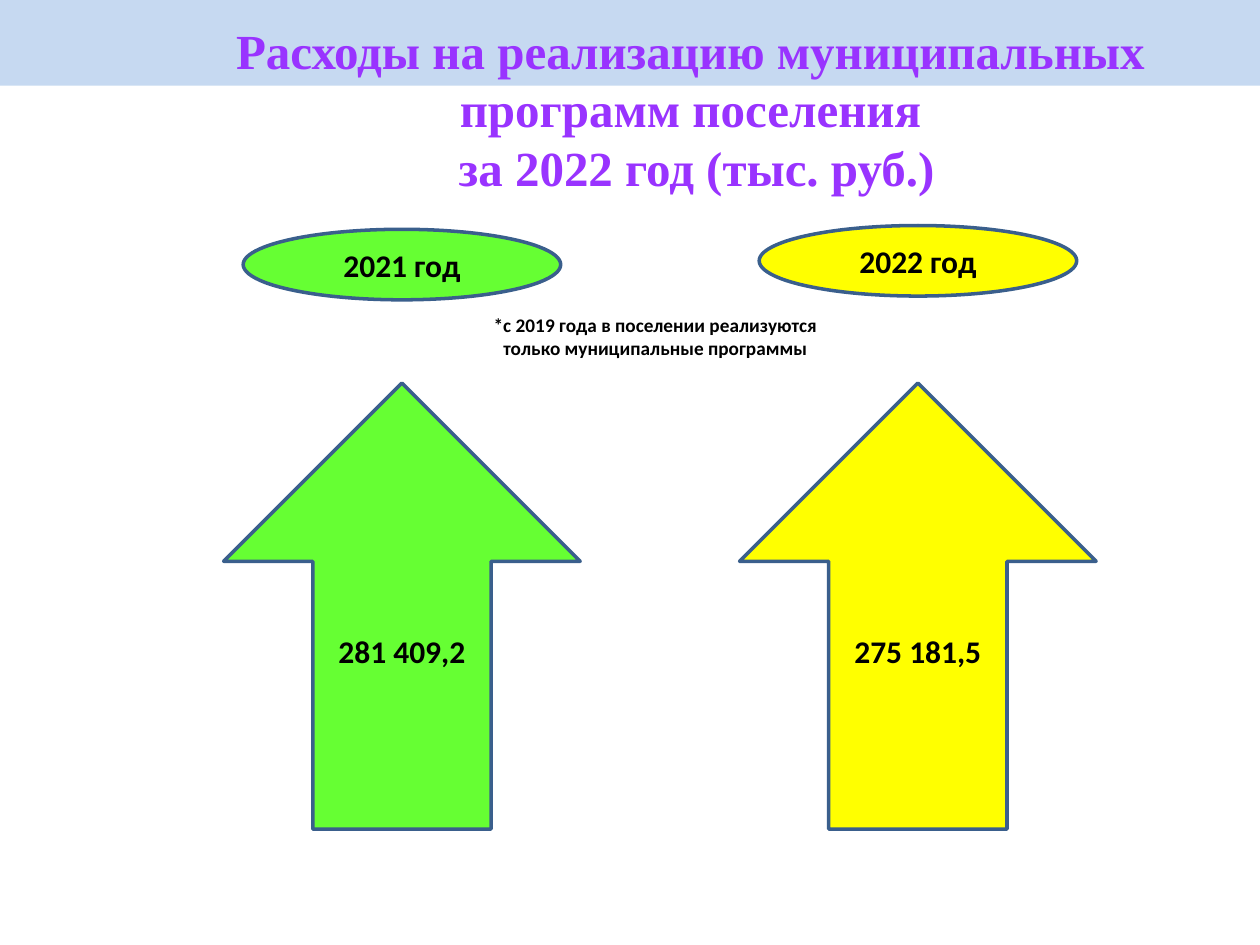
"""Builds the slide comparing municipal programme spending in 2021 and 2022."""
import pptx
import pptx.dml.color
import pptx.enum.shapes
import pptx.enum.text
import pptx.util

COLORS = {
    "band": "C6D9F1",
    "title": "9933FF",
    "outline": "3A5F8C",
    "text": "000000",
    "green": "66FF33",
    "yellow": "FFFF00",
}
SHAPES = pptx.enum.shapes.MSO_SHAPE
COLUMNS, ROWS = 100, 75


class SpendingSlide:
    """Holds the deck, its current slide and the shared style."""

    def __init__(self):
        self.deck = pptx.Presentation()
        self.deck.slide_width = pptx.util.Inches(10)
        self.deck.slide_height = pptx.util.Inches(7.5)
        self.slide = self.deck.slides.add_slide(self.deck.slide_layouts[6])

    def place(self, column, row, columns, rows):
        across = self.deck.slide_width / COLUMNS
        down = self.deck.slide_height / ROWS
        return [round(n) for n in (column * across, row * down, columns * across, rows * down)]

    def color(self, name):
        return pptx.dml.color.RGBColor.from_string(COLORS[name])

    def set_text(self, frame, lines, size, font="Calibri", color="text"):
        frame.word_wrap = True
        frame.text = "\n".join(lines)
        for paragraph in frame.paragraphs:
            paragraph.alignment = pptx.enum.text.PP_ALIGN.CENTER
            paragraph.font.name = font
            paragraph.font.size = pptx.util.Pt(size)
            paragraph.font.bold = True
            paragraph.font.color.rgb = self.color(color)

    def shape(self, kind, cells, fill, label=None):
        figure = self.slide.shapes.add_shape(kind, *self.place(*cells))
        figure.shadow.inherit = False
        figure.fill.solid()
        figure.fill.fore_color.rgb = self.color(fill)
        if label is None:
            figure.line.fill.background()
            return
        figure.line.color.rgb = self.color("outline")
        figure.line.width = pptx.util.Pt(2)
        figure.text_frame.vertical_anchor = pptx.enum.text.MSO_ANCHOR.MIDDLE
        self.set_text(figure.text_frame, [label], 18)

    def text(self, cells, lines, size, **style):
        box = self.slide.shapes.add_textbox(*self.place(*cells))
        self.set_text(box.text_frame, lines, size, **style)

    def year(self, center, oval_row, fill, year, amount):
        self.shape(SHAPES.UP_ARROW, (center - 14.15, 30.4, 28.3, 35.4), fill, amount)
        self.shape(SHAPES.OVAL, (center - 12.6, oval_row, 25.2, 5.6), fill, year)


def main():
    spending = SpendingSlide()
    spending.shape(SHAPES.RECTANGLE, (0, 0, COLUMNS, 6.8), "band")
    spending.text(
        (11.5, 1.1, 86.6, 15.1),
        ["Расходы на реализацию муниципальных программ поселения", " за 2022 год (тыс. руб.)"],
        28,
        font="Times New Roman",
        color="title",
    )
    spending.year(31.9, 18.2, "green", "2021 год", "281 409,2")
    spending.year(72.85, 17.9, "yellow", "2022 год", "275 181,5")
    spending.text(
        (27.2, 24.4, 50, 4.7),
        ["*с 2019 года в поселении реализуются ", "только муниципальные программы "],
        11,
    )
    spending.deck.save("out.pptx")


if __name__ == "__main__":
    main()
